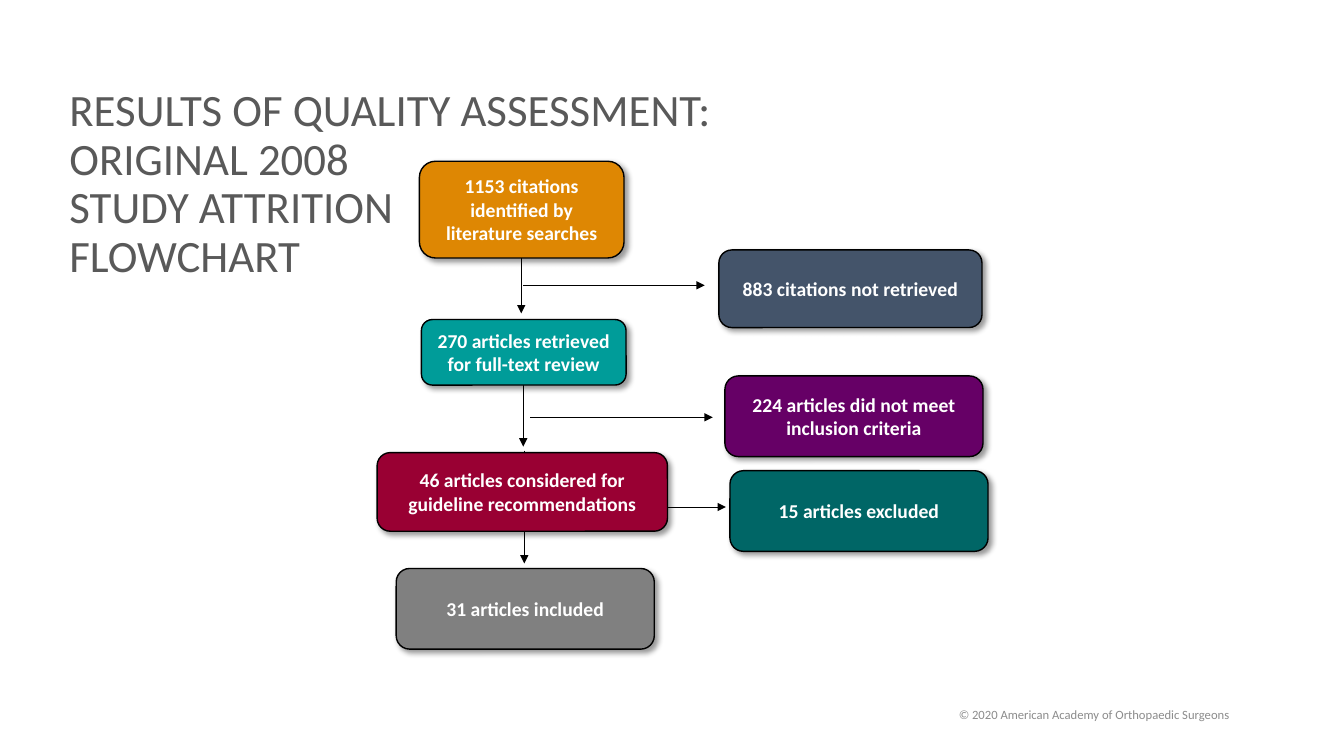
from lxml import etree
from pptx import Presentation
from pptx.dml.color import RGBColor
from pptx.enum.shapes import MSO_CONNECTOR, MSO_SHAPE
from pptx.enum.text import MSO_ANCHOR, PP_ALIGN
from pptx.oxml import parse_xml
from pptx.oxml.ns import qn
from pptx.util import Inches, Pt

ROUNDED = MSO_SHAPE.ROUNDED_RECTANGLE
STRAIGHT = MSO_CONNECTOR.STRAIGHT
MIDDLE = MSO_ANCHOR.MIDDLE
LEFT, CENTER = PP_ALIGN.LEFT, PP_ALIGN.CENTER
FONT = "Calibri"
SHADOW = (
    '<a:outerShdw xmlns:a="http://schemas.openxmlformats.org/drawingml/2006/main"'
    ' blurRad="50800" dist="38100" dir="2700000" algn="tl" rotWithShape="0">'
    '<a:srgbClr val="000000"><a:alpha val="40000"/></a:srgbClr></a:outerShdw>'
)

TITLE = ["RESULTS OF QUALITY ASSESSMENT:", "ORIGINAL 2008", "STUDY ATTRITION", "FLOWCHART"]
COPYRIGHT = ["© 2020 American Academy of Orthopaedic Surgeons"]

ARROWS = [
    (1.46, 2.87, 1.46, 3.99),
    (1.65, 3.43, 3.46, 3.43),
    (1.45, 1.23, 3.25, 1.23),
    (1.45, 1.7, 1.45, 2.83),
    (1.52, 2.54, 3.33, 2.54),
    (1.43, 0.39, 1.43, 1.51),
]
STAGES = [
    ("883 citations not retrieved", "44546A", 3.39, 0.88, 2.61, 0.77),
    ("1153 citations identified by literature searches", "DE8703", 0.42, 0, 2.03, 0.96),
    ("270 articles retrieved for full-text review", "009C99", 0.44, 1.57, 2.03, 0.65),
    ("224 articles did not meet inclusion criteria", "660066", 3.45, 2.13, 2.56, 0.8),
    ("46 articles considered for guideline recommendations", "990033", 0, 2.89, 2.88, 0.78),
    ("15 articles excluded", "006666", 3.5, 3.07, 2.56, 0.8),
    ("31 articles included", "808080", 0.19, 4.04, 2.56, 0.8),
]


def rgb(value):
    """Turn a hex string into a colour."""
    return RGBColor.from_string(value)


def write(s, lines, size, color, align=CENTER, bold=False, spacing=None):
    """Write one paragraph per line, centred vertically in the shape."""
    tf = s.text_frame
    tf.word_wrap = True
    tf.vertical_anchor = MIDDLE
    for i, line in enumerate(lines):
        p = tf.paragraphs[0] if i == 0 else tf.add_paragraph()
        p.alignment = align
        p.line_spacing = spacing
        r = p.add_run()
        r.text = line
        r.font.name = FONT
        r.font.size = Pt(size)
        r.font.bold = bold
        r.font.color.rgb = rgb(color)


def add_text(slide, box, lines, size, color, align, spacing=None):
    """Place a text box."""
    s = slide.shapes.add_textbox(*map(Inches, box))
    write(s, lines, size, color, align, spacing=spacing)


def add_arrow(slide, x1, y1, x2, y2):
    """Draw a thin black line with an arrowhead at its end."""
    s = slide.shapes.add_connector(STRAIGHT, *map(Inches, (x1, y1, x2, y2)))
    s.line.color.rgb = rgb("000000")
    s.line.width = Pt(0.5)
    etree.SubElement(s.line._get_or_add_ln(), qn("a:tailEnd"), type="triangle")
    etree.SubElement(s._element.spPr, qn("a:effectLst"))


def add_stage(slide, box, text, fill):
    """Draw a rounded flowchart box with a soft shadow."""
    s = slide.shapes.add_shape(ROUNDED, *map(Inches, box))
    s.fill.solid()
    s.fill.fore_color.rgb = rgb(fill)
    s.line.color.rgb = rgb("000000")
    s.line.width = Pt(1)
    s.shadow.inherit = False
    s._element.spPr.find(qn("a:effectLst")).append(parse_xml(SHADOW))
    write(s, [text], 14, "FFFFFF", bold=True)


def add_flowchart(slide, left, top):
    """Lay out the arrows and then the stages from the given corner."""
    for x1, y1, x2, y2 in ARROWS:
        add_arrow(slide, left + x1, top + y1, left + x2, top + y2)
    for text, fill, x, y, width, height in STAGES:
        add_stage(slide, (left + x, top + y, width, height), text, fill)


def main():
    """Build the slide and save it."""
    prs = Presentation()
    prs.slide_width, prs.slide_height = Inches(13.33), Inches(7.5)
    slide = prs.slides.add_slide(prs.slide_layouts[6])
    add_text(slide, (8.6, 6.89, 4.5, 0.4), COPYRIGHT, 9, "8C8C8C", CENTER)
    add_text(slide, (0.59, 0.76, 10.68, 2.15), TITLE, 32, "595959", LEFT, 0.9)
    add_flowchart(slide, 3.74, 1.6)
    prs.save("out.pptx")


if __name__ == "__main__":
    main()
